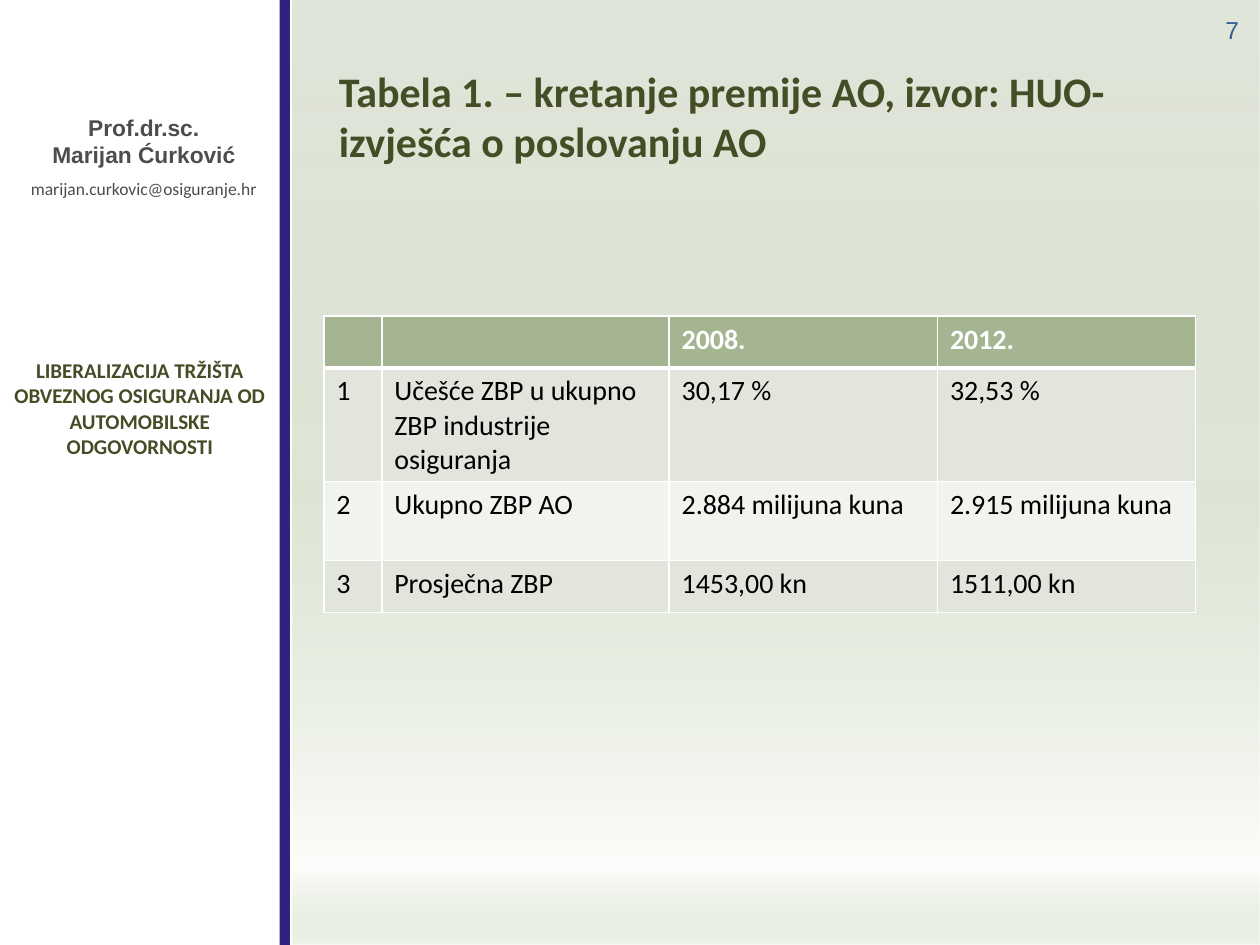
from dataclasses import dataclass
from typing import Optional

from lxml import etree
from pptx import Presentation
from pptx.dml.color import RGBColor
from pptx.enum.shapes import MSO_SHAPE
from pptx.enum.text import PP_ALIGN
from pptx.oxml import parse_xml
from pptx.oxml.ns import nsdecls, qn
from pptx.util import Inches, Pt

RECT = MSO_SHAPE.RECTANGLE
LEFT, CENTER = PP_ALIGN.LEFT, PP_ALIGN.CENTER

WHITE = RGBColor(0xFF, 0xFF, 0xFF)
BLACK = RGBColor(0, 0, 0)
GRAY = RGBColor(0x4D, 0x4D, 0x4D)
OLIVE = RGBColor(0x44, 0x4D, 0x26)
BLUE = RGBColor(0x37, 0x60, 0x92)
INDIGO = RGBColor(0x2F, 0x23, 0x82)
SAGE = RGBColor(0xA5, 0xB5, 0x92)
BANDS = (RGBColor(0xE1, 0xE5, 0xDC), RGBColor(0xF0, 0xF3, 0xEE))

STOPS = ((6, "DBE1D3", 88), (50, "DDE5D4", 100), (92, "CAD7BB", 4), (100, "EEF2EA", 100))
COLS = (0.46, 2.28, 2.13, 2.05)
ROWS = (0.41, 0.9, 0.63, 0.41)
DATA = (
    ("", "", "2008.", "2012."),
    ("1", "Učešće ZBP u ukupno ZBP industrije osiguranja", "30,17 %", "32,53 %"),
    ("2", "Ukupno ZBP AO", "2.884 milijuna kuna", "2.915 milijuna kuna"),
    ("3", "Prosječna ZBP", "1453,00 kn", "1511,00 kn"),
)


@dataclass(frozen=True)
class Line:
    text: str
    size: int
    color: RGBColor
    bold: bool = False
    face: str = "Calibri"
    align: PP_ALIGN = CENTER
    before: int = 0
    pitch: Optional[int] = None


@dataclass(frozen=True)
class Box:
    left: float
    top: float
    width: float
    height: float
    lines: tuple[Line, ...]
    wrap: bool = True


BOXES = (
    Box(0.13, 0.85, 2.02, 1.01, (
        Line("Prof.dr.sc.", 13, GRAY, True, "Arial"),
        Line("Marijan Ćurković", 13, GRAY, True, "Arial"),
        Line("marijan.curkovic@osiguranje.hr", 10, GRAY, before=6),
    ), wrap=False),
    Box(-0.04, 2.79, 2.3, 0.91, (
        Line("LIBERALIZACIJA TRŽIŠTA OBVEZNOG OSIGURANJA OD AUTOMOBILSKE ODGOVORNOSTI",
             12, OLIVE, True),
    )),
    Box(9.56, 0, 0.44, 0.38, (Line("7", 14, BLUE, face="Arial", pitch=22),)),
    Box(2.59, 0.47, 7.32, 0.91, (
        Line("Tabela 1. – kretanje premije AO, izvor: HUO-izvješća o poslovanju AO",
             24, OLIVE, True, align=LEFT),
    )),
)


def write(para, line: Line) -> None:
    para.text = line.text
    para.alignment = line.align
    if line.before:
        para.space_before = Pt(line.before)
    if line.pitch:
        para.line_spacing = Pt(line.pitch)
    font = para.font
    font.name, font.size, font.bold = line.face, Pt(line.size), line.bold
    font.color.rgb = line.color


def add_box(slide, box: Box) -> None:
    shape = slide.shapes.add_textbox(
        Inches(box.left), Inches(box.top), Inches(box.width), Inches(box.height))
    frame = shape.text_frame
    frame.word_wrap = box.wrap
    for num, line in enumerate(box.lines):
        write(frame.add_paragraph() if num else frame.paragraphs[0], line)


def add_panel(slide, left: float, width: float):
    shape = slide.shapes.add_shape(RECT, Inches(left), 0, Inches(width), Inches(7.5))
    shape.shadow.inherit = False
    shape.line.fill.background()
    shape.fill.solid()
    shape.fill.fore_color.rgb = INDIGO
    return shape


def shade(shape) -> None:
    stops = "".join(
        f'<a:gs pos="{pos * 1000}"><a:srgbClr val="{color}">'
        f'<a:alpha val="{alpha * 1000}"/></a:srgbClr></a:gs>'
        for pos, color, alpha in STOPS)
    grad = parse_xml(
        f'<a:gradFill {nsdecls("a")} rotWithShape="1"><a:gsLst>{stops}</a:gsLst>'
        '<a:lin ang="5400000" scaled="0"/></a:gradFill>')
    props = shape.fill._xPr
    props.replace(props.find(qn("a:solidFill")), grad)


def edge(cell, side: str, width: int) -> None:
    line = etree.SubElement(
        cell._tc.get_or_add_tcPr(), qn(f"a:ln{side}"), w=str(Pt(width)))
    fill = etree.SubElement(line, qn("a:solidFill"))
    etree.SubElement(fill, qn("a:srgbClr"), val=str(WHITE))


def add_grid(slide) -> None:
    table = slide.shapes.add_table(
        len(ROWS), len(COLS), Inches(2.57), Inches(2.51),
        Inches(sum(COLS)), Inches(sum(ROWS))).table
    for col, width in zip(table.columns, COLS):
        col.width = Inches(width)
    for num, (row, height, texts) in enumerate(zip(table.rows, ROWS, DATA)):
        row.height = Inches(height)
        head = num == 0
        for cell, text in zip(row.cells, texts):
            for side in "LRTB":
                thick = (head and side == "B") or (num == 1 and side == "T")
                edge(cell, side, 3 if thick else 1)
            cell.fill.solid()
            cell.fill.fore_color.rgb = SAGE if head else BANDS[(num - 1) % 2]
            write(cell.text_frame.paragraphs[0],
                  Line(text, 16, WHITE if head else BLACK, head, align=LEFT))


def main() -> None:
    """Build the slide with the premium table and its sidebar."""
    deck = Presentation()
    deck.slide_width, deck.slide_height = Inches(10), Inches(7.5)
    slide = deck.slides.add_slide(deck.slide_layouts[6])
    shade(add_panel(slide, 2.32, 7.68))
    add_panel(slide, 2.22, 0.08)
    for box in BOXES:
        add_box(slide, box)
    add_grid(slide)
    deck.save("out.pptx")


if __name__ == "__main__":
    main()
